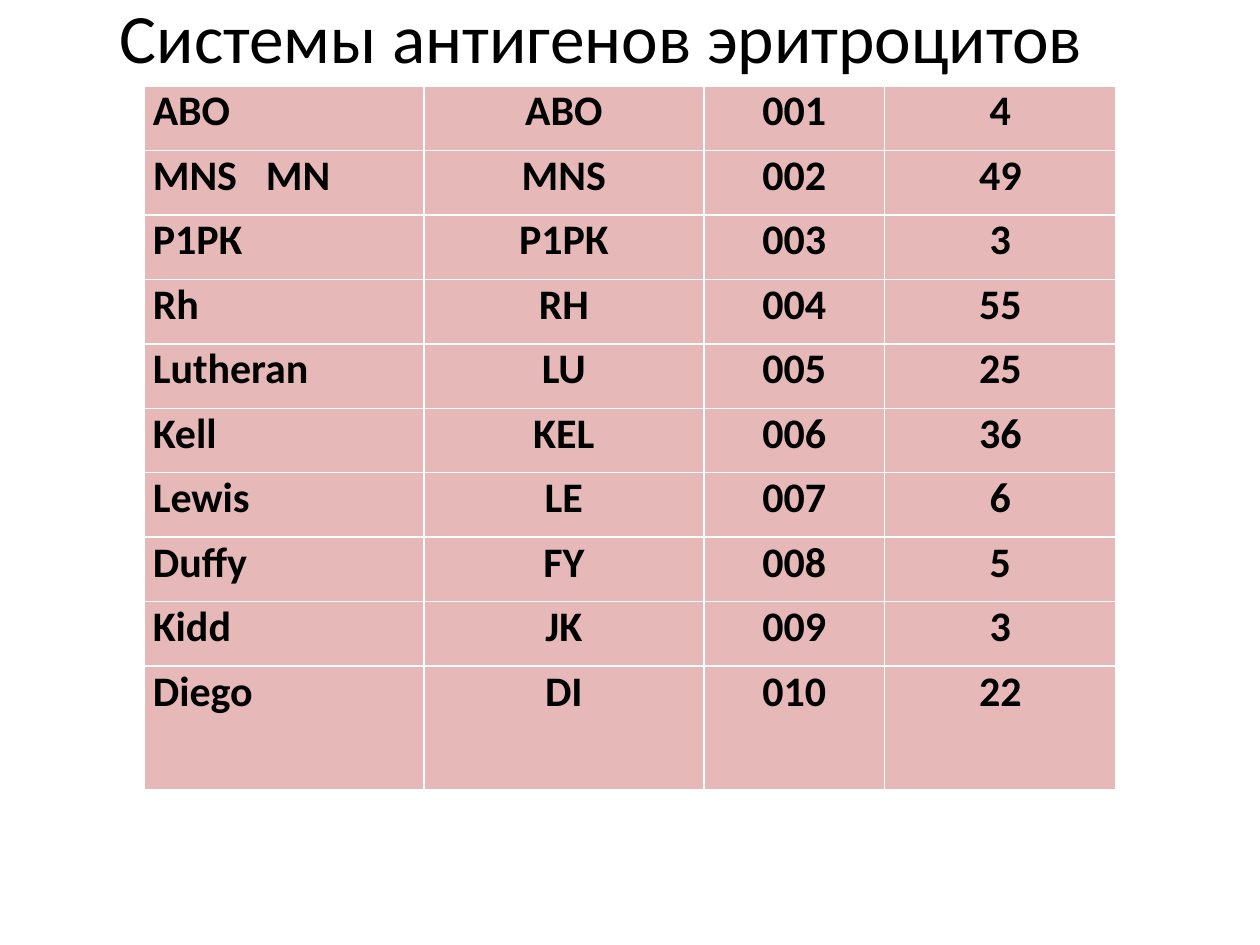
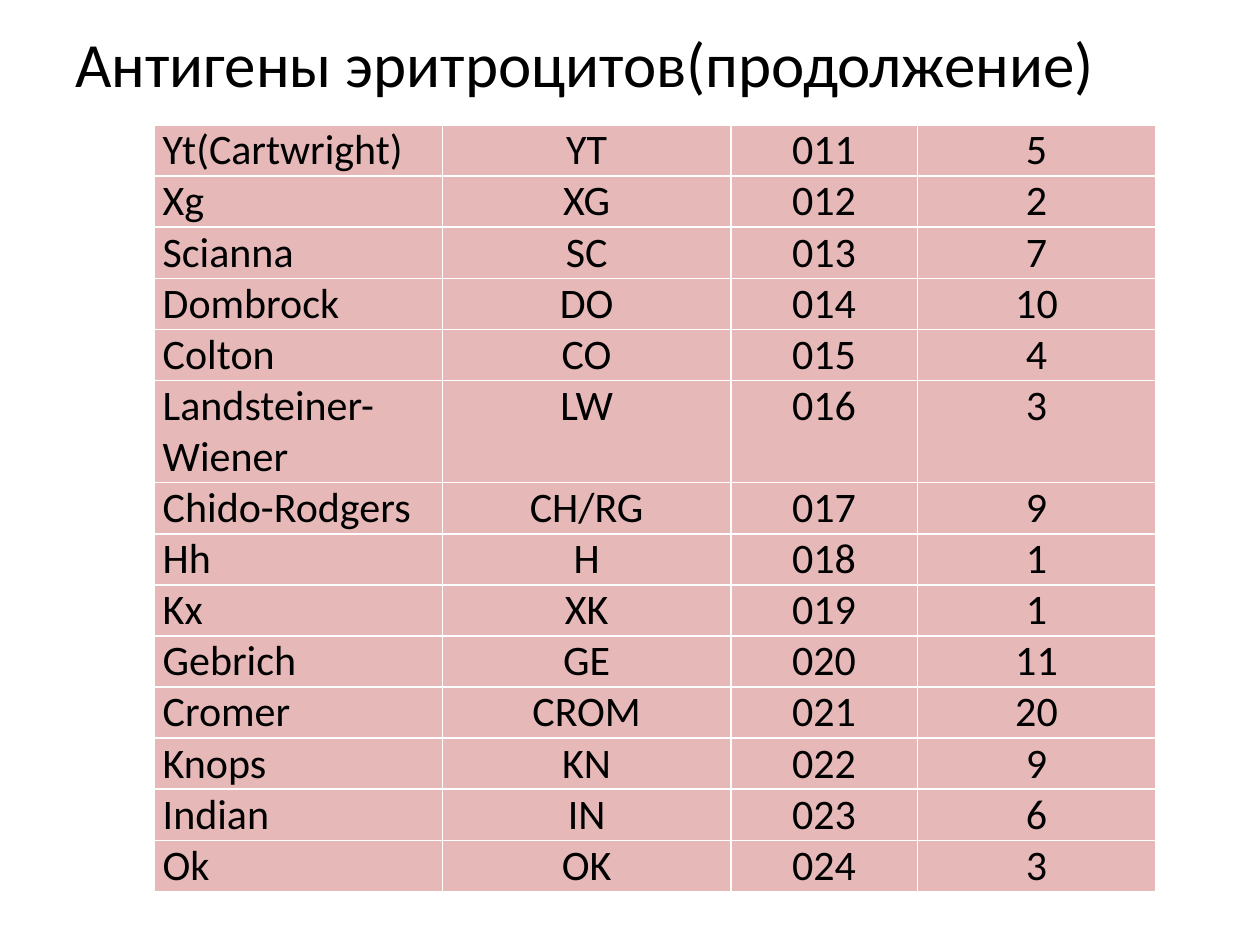
from dataclasses import dataclass

from lxml import etree
from pptx import Presentation
from pptx import util as u
from pptx.dml.color import RGBColor
from pptx.enum import text
from pptx.oxml import ns


@dataclass(frozen=True)
class Theme:
    font: str = "Calibri"
    ink: str = "000000"
    cell: str = "E6B9B8"
    grid: str = "FFFFFF"
    grid_pt: float = 1
    body_pt: float = 24
    inset: float = 0.18
    columns: tuple = (0.288, 0.288, 0.186, 0.238)


THEME = Theme()
LEFT, CENTER = text.PP_ALIGN.LEFT, text.PP_ALIGN.CENTER

# System name, symbol, number of antigens
MAIN_SYSTEMS = [
    ("АВО", "АВО", 4),
    ("MNS\tMN", "MNS", 49),
    ("P1РК", "P1РК", 3),
    ("Rh", "RH", 55),
    ("Lutheran", "LU", 25),
    ("Kell", "KEL", 36),
    ("Lewis", "LE", 6),
    ("Duffy", "FY", 5),
    ("Kidd", "JK", 3),
    ("Diego", "DI", 22),
]
MORE_SYSTEMS = [
    ("Yt(Cartwright)", "YT", 5),
    ("Xg", "XG", 2),
    ("Scianna", "SC", 7),
    ("Dombrock", "DO", 10),
    ("Colton", "CO", 4),
    ("Landsteiner-Wiener", "LW", 3),
    ("Chido-Rodgers", "CH/RG", 9),
    ("Hh", "H", 1),
    ("Kx", "XK", 1),
    ("Gebrich", "GE", 11),
    ("Cromer", "CROM", 20),
    ("Knops", "KN", 9),
    ("Indian", "IN", 6),
    ("Ok", "OK", 3),
]


def write(tf, content, size=THEME.body_pt, bold=False, align=LEFT):
    p = tf.paragraphs[0]
    p.alignment = align
    r = p.add_run()
    r.text = content
    r.font.name = THEME.font
    r.font.size = u.Pt(size)
    r.font.bold = bold
    r.font.color.rgb = RGBColor.from_string(THEME.ink)
    return p


def add_tab_stop(p, position):
    tabs = etree.SubElement(p._p.get_or_add_pPr(), ns.qn("a:tabLst"))
    etree.SubElement(tabs, ns.qn("a:tab"), pos=str(u.Cm(position)), algn="l")


def add_title(s, box, content, size, align):
    sp = s.shapes.add_textbox(*map(u.Cm, box))
    tf = sp.text_frame
    tf.word_wrap = True
    tf.vertical_anchor = text.MSO_ANCHOR.MIDDLE
    tf.margin_top = tf.margin_bottom = 0
    write(tf, content, size=size, align=align)


def style_cell(cell):
    cell.margin_left = cell.margin_right = u.Cm(THEME.inset)
    cell.margin_top = cell.margin_bottom = 0
    tc_pr = cell._tc.get_or_add_tcPr()
    for side in ("lnL", "lnR", "lnT", "lnB"):
        ln = etree.SubElement(tc_pr, ns.qn(f"a:{side}"), w=str(u.Pt(THEME.grid_pt)))
        fill = etree.SubElement(ln, ns.qn("a:solidFill"))
        etree.SubElement(fill, ns.qn("a:srgbClr"), val=THEME.grid)
    cell.fill.solid()
    cell.fill.fore_color.rgb = RGBColor.from_string(THEME.cell)


def add_systems_table(s, box, systems, first_number, row_heights, bold):
    """Fill the box with blood group systems numbered from first_number."""
    width = box[2]
    frame = s.shapes.add_table(len(systems), len(THEME.columns), *map(u.Cm, box))
    table = frame.table
    table.first_row = table.horz_banding = False
    for column, share in zip(table.columns, THEME.columns):
        column.width = u.Cm(width * share)
    for row, height in zip(table.rows, row_heights):
        row.height = u.Cm(height)
    for i, (name, symbol, count) in enumerate(systems):
        values = (name, symbol, f"{first_number + i:03}", str(count))
        for j, value in enumerate(values):
            cell = table.cell(i, j)
            style_cell(cell)
            p = write(cell.text_frame, value, bold=bold, align=CENTER if j else LEFT)
            if "\t" in value:
                add_tab_stop(p, 2.28)


def add_systems_slide(prs, title, table):
    s = prs.slides.add_slide(prs.slide_layouts[6])
    add_title(s, **title)
    add_systems_table(s, **table)


def main():
    prs = Presentation()
    prs.slide_width, prs.slide_height = u.Cm(25.4), u.Cm(19.05)

    main_rows = [1.3] * 9 + [2.49]
    add_systems_slide(
        prs,
        title=dict(box=(1.4, 0.15, 21.44, 1.14), size=39.6, align=CENTER,
                   content="Системы антигенов эритроцитов"),
        table=dict(box=(2.9, 1.73, 19.6, sum(main_rows)), systems=MAIN_SYSTEMS,
                   first_number=1, row_heights=main_rows, bold=True),
    )

    line = 1.03
    more_rows = [line * (2 if "Wiener" in name else 1) for name, *_ in MORE_SYSTEMS]
    add_systems_slide(
        prs,
        title=dict(box=(1.27, 0.4, 22.86, 1.7), size=36, align=LEFT,
                   content="Антигены эритроцитов(продолжение)"),
        table=dict(box=(3.1, 2.52, 20.2, sum(more_rows)), systems=MORE_SYSTEMS,
                   first_number=len(MAIN_SYSTEMS) + 1, row_heights=more_rows, bold=False),
    )
    prs.save("out.pptx")


if __name__ == "__main__":
    main()
